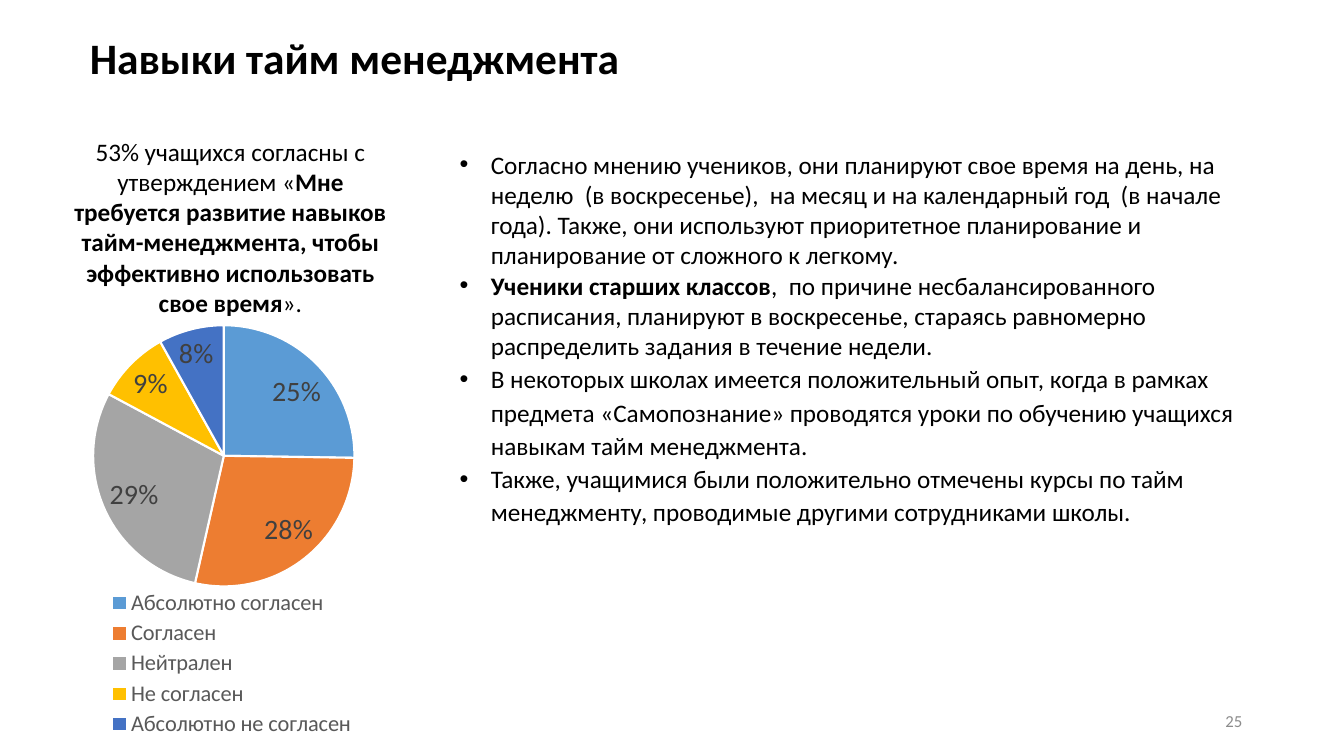
from lxml import etree
from pptx import Presentation
from pptx.chart.data import CategoryChartData
from pptx.dml.color import RGBColor
from pptx.enum import chart as ch, text as t
from pptx.oxml import parse_xml
from pptx.oxml.ns import nsdecls, qn
from pptx.util import Inches, Pt

# Content
TITLE = "Навыки тайм менеджмента"
NUMBER = "25"
CLAIM = [("53% учащихся согласны с утверждением «", False),
         ("Мне требуется развитие навыков тайм-менеджмента, чтобы "
          "эффективно использовать свое время", True),
         ("».", False)]
# Each point: line spacing, runs of (words, bold)
POINTS = [
    (1.0, [("Согласно мнению учеников, они планируют свое время на день, на "
            "неделю  (в воскресенье),  на месяц и на календарный год  (в начале "
            "года). Также, они используют приоритетное планирование и "
            "планирование от сложного к легкому.", False)]),
    (1.0, [("Ученики старших классов", True),
           (",  по причине несбалансированного расписания, планируют в "
            "воскресенье, стараясь равномерно распределить задания в течение "
            "недели.", False)]),
    (1.1, [("В некоторых школах имеется положительный опыт, когда в рамках "
            "предмета «Самопознание» проводятся уроки по обучению учащихся "
            "навыкам тайм менеджмента.", False)]),
    (1.1, [("Также, учащимися были положительно отмечены курсы по тайм "
            "менеджменту, проводимые другими сотрудниками школы.", False)]),
]
ANSWERS = [("Абсолютно согласен", 0.25, "5B9BD5"),
           ("Согласен", 0.28, "ED7D31"),
           ("Нейтрален", 0.29, "A5A5A5"),
           ("Не согласен", 0.09, "FFC000"),
           ("Абсолютно не согласен", 0.08, "4472C4")]


def paint(font, size, color, bold=False):
    style = {"name": "Calibri", "size": Pt(size), "bold": bold}
    for key, val in style.items():
        setattr(font, key, val)
    font.color.rgb = RGBColor.from_string(color)


def write(par, runs, size=18, color="000000", **form):
    for key, val in form.items():
        setattr(par, key, val)
    for words, bold in runs:
        run = par.add_run()
        run.text = words
        paint(run.font, size, color, bold)


def box(left, top, width, height):
    frame = slide.shapes.add_textbox(*map(Inches, (left, top, width, height))).text_frame
    frame.word_wrap = True
    return frame


def bullet(par, indent=0.31):
    props = par._p.get_or_add_pPr()
    props.set("marL", str(Inches(indent)))
    props.set("indent", str(-Inches(indent)))
    etree.SubElement(props, qn("a:buFont")).set("typeface", "Arial")
    etree.SubElement(props, qn("a:buChar")).set("char", "•")


def layout(part, index, area, inner=False):
    """Fix a chart part at fractions of the chart: x, y, w, h."""
    for old in part.findall(qn("c:layout")):
        part.remove(old)
    tags = '<c:layoutTarget val="inner"/>' if inner else ""
    tags += '<c:xMode val="edge"/><c:yMode val="edge"/>'
    tags += "".join(f'<c:{k} val="{v}"/>' for k, v in zip("xywh", area))
    part.insert(index, parse_xml(
        f'<c:layout {nsdecls("c")}><c:manualLayout>{tags}</c:manualLayout></c:layout>'))


prs = Presentation()
prs.slide_width, prs.slide_height = Inches(13.33), Inches(7.5)
slide = prs.slides.add_slide(prs.slide_layouts[5])

# Title
title = slide.shapes.title
for key, val in {"left": 0.79, "top": 0.29, "width": 11.5, "height": 0.61}.items():
    setattr(title, key, Inches(val))
title.text_frame.vertical_anchor = t.MSO_ANCHOR.MIDDLE
write(title.text_frame.paragraphs[0], [(TITLE, True)], 31,
      alignment=t.PP_ALIGN.LEFT, line_spacing=0.9)

# Slide number
frame = box(9.42, 6.95, 3, 0.4)
frame.vertical_anchor = t.MSO_ANCHOR.MIDDLE
write(frame.paragraphs[0], [(NUMBER, False)], 12, "8C8C8C",
      alignment=t.PP_ALIGN.RIGHT)

# Findings
frame = box(4.46, 1.43, 8.28, 3.87)
for i, (gap, runs) in enumerate(POINTS):
    par = frame.add_paragraph() if i else frame.paragraphs[0]
    write(par, runs, line_spacing=gap)
    bullet(par)

# Pie of answers
names, shares, colors = zip(*ANSWERS)
data = CategoryChartData(number_format="0%")
data.categories = names
data.add_series("Series 1", shares)
pie = slide.shapes.add_chart(ch.XL_CHART_TYPE.PIE, *map(Inches, (0.19, 1.46, 4.06, 5.89)),
                             data).chart
paint(pie.font, 10, "000000")
pie.has_title = False
plot = pie.plots[0]
plot.vary_by_categories = True
for i, color in enumerate(colors):
    style = plot.series[0].points[i].format
    style.fill.solid()
    style.fill.fore_color.rgb = RGBColor.from_string(color)
    style.line.color.rgb = RGBColor.from_string("FFFFFF")
    style.line.width = Pt(1.5)
labels = plot.series[0].data_labels
for key, val in {"show_value": True, "show_percentage": False, "number_format": "0%",
                 "number_format_is_linked": False,
                 "position": ch.XL_LABEL_POSITION.BEST_FIT}.items():
    setattr(labels, key, val)
paint(labels.font, 20, "404040")

# Legend and chart areas
pie.has_legend = True
pie.legend.position = ch.XL_LEGEND_POSITION.RIGHT
pie.legend.include_in_layout = False
paint(pie.legend.font, 16, "595959")
layout(pie.legend._element, 1, (0.14, 0.74, 0.76, 0.26))
layout(pie._chartSpace.chart.plotArea, 0, (0.18, 0.3, 0.64, 0.44), inner=True)

# Claim above the pie
write(box(0.53, 1.3, 3.51, 1.92).paragraphs[0], CLAIM, alignment=t.PP_ALIGN.CENTER)

prs.save("out.pptx")
